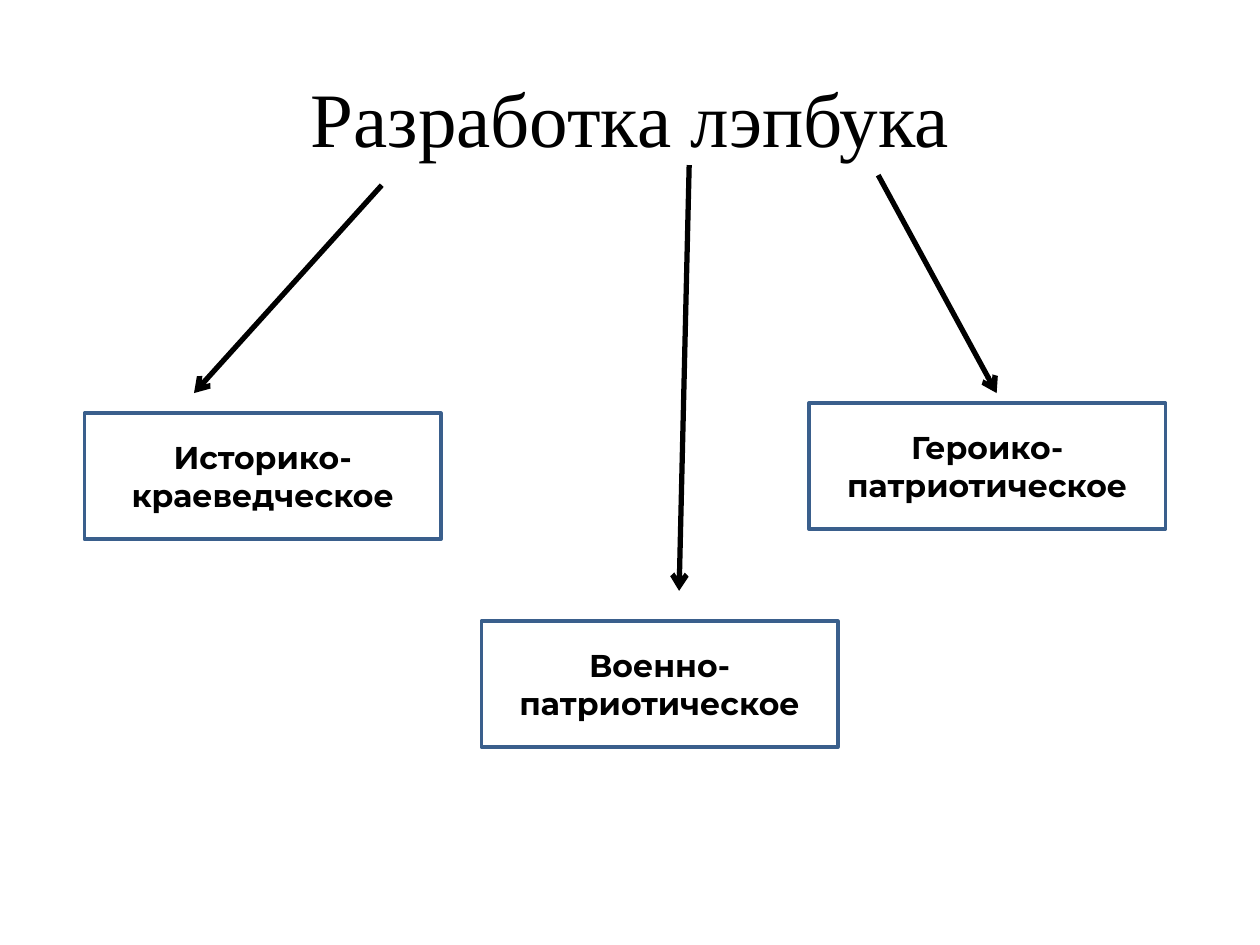
from dataclasses import dataclass

from lxml.etree import SubElement
from pptx import Presentation
from pptx.dml.color import RGBColor
from pptx.enum.shapes import MSO_CONNECTOR, MSO_SHAPE
from pptx.enum.text import MSO_ANCHOR, PP_ALIGN
from pptx.oxml.ns import qn
from pptx.shapes.base import BaseShape
from pptx.slide import Slide
from pptx.util import Inches, Pt

BLACK = RGBColor(0x00, 0x00, 0x00)
BORDER_BLUE = RGBColor(0x3A, 0x5F, 0x8C)
DIRECTION_WIDTH = Inches(2.83)
DIRECTION_HEIGHT = Inches(1)


@dataclass(frozen=True)
class Direction:
    name: str
    left: float
    top: float
    arrow_start: tuple[float, float]
    arrow_end: tuple[float, float]


DIRECTIONS = (
    Direction("Историко-краеведческое", 0.67, 3.28, (3.03, 1.47), (1.54, 3.12)),
    Direction("Военно-патриотическое", 3.82, 4.93, (5.47, 1.31), (5.39, 4.69)),
    Direction("Героико-патриотическое", 6.42, 3.2, (6.97, 1.39), (7.91, 3.12)),
)


def write_text(
    shape: BaseShape, text: str, *, font: str, size: float, bold: bool = False
) -> None:
    frame = shape.text_frame
    frame.word_wrap = True
    frame.vertical_anchor = MSO_ANCHOR.MIDDLE
    paragraph = frame.paragraphs[0]
    paragraph.alignment = PP_ALIGN.CENTER
    run = paragraph.add_run()
    run.text = text
    run.font.name = font
    run.font.size = Pt(size)
    run.font.bold = bold
    run.font.color.rgb = BLACK


def draw_arrow(
    slide: Slide, start: tuple[float, float], end: tuple[float, float]
) -> None:
    arrow = slide.shapes.add_connector(
        MSO_CONNECTOR.STRAIGHT, *map(Inches, start + end)
    )
    arrow.line.color.rgb = BLACK
    arrow.line.width = Pt(3)
    properties = arrow._element.spPr
    SubElement(properties.find(qn("a:ln")), qn("a:tailEnd"), type="arrow")
    SubElement(properties, qn("a:effectLst"))


def draw_direction(slide: Slide, direction: Direction) -> None:
    box = slide.shapes.add_shape(
        MSO_SHAPE.RECTANGLE,
        Inches(direction.left),
        Inches(direction.top),
        DIRECTION_WIDTH,
        DIRECTION_HEIGHT,
    )
    box.shadow.inherit = False
    box.fill.background()
    box.line.color.rgb = BORDER_BLUE
    box.line.width = Pt(2)
    write_text(box, direction.name, font="Montserrat", size=18, bold=True)
    draw_arrow(slide, direction.arrow_start, direction.arrow_end)


def main() -> None:
    presentation = Presentation()
    presentation.slide_width = Inches(10)
    presentation.slide_height = Inches(7.5)
    slide = presentation.slides.add_slide(presentation.slide_layouts[6])
    title = slide.shapes.add_textbox(
        Inches(0.5), Inches(0.3), Inches(9), Inches(1.25)
    )
    write_text(title, "Разработка лэпбука", font="Times New Roman", size=44)
    for direction in DIRECTIONS:
        draw_direction(slide, direction)
    presentation.save("out.pptx")


if __name__ == "__main__":
    main()
